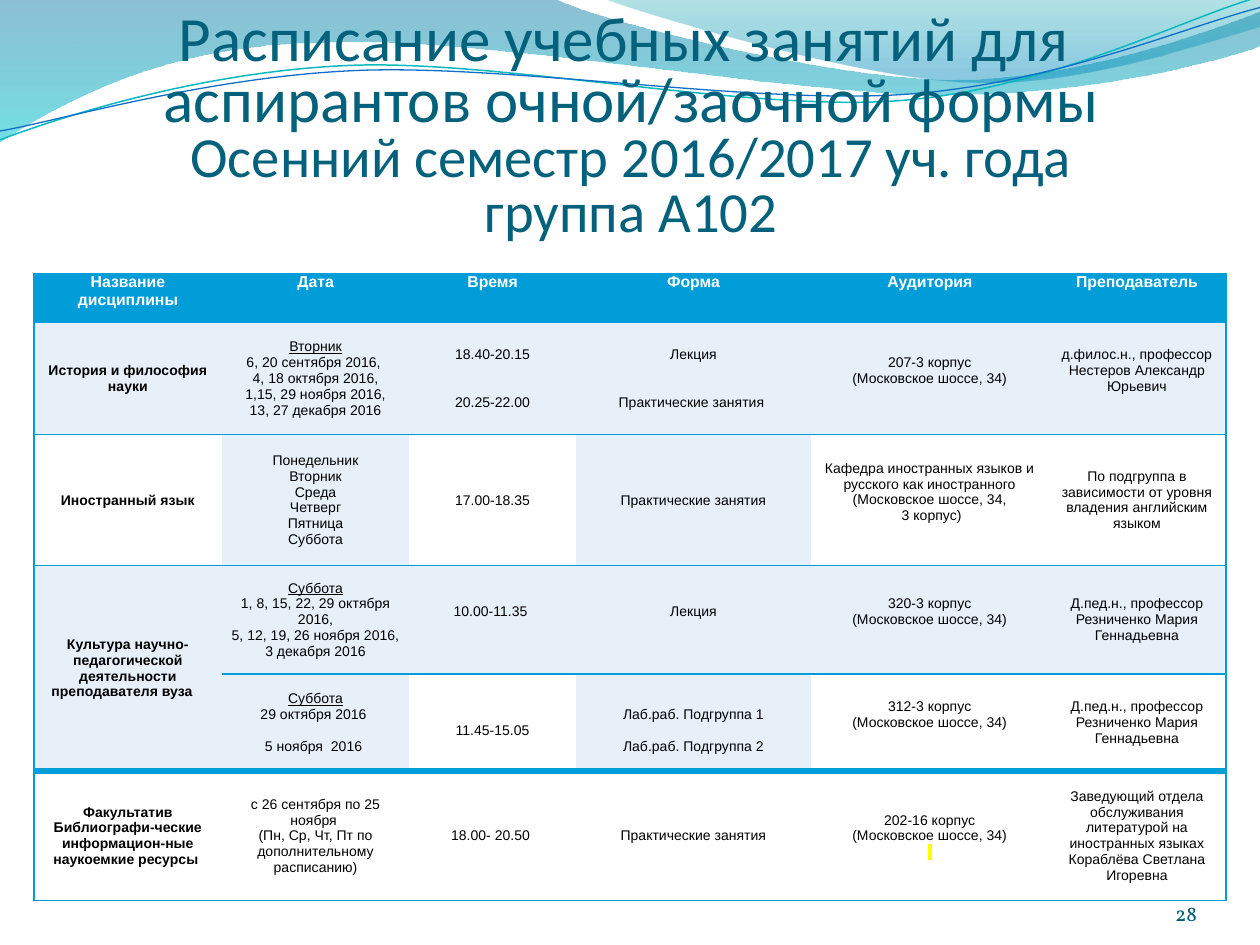
from lxml import etree
from pptx import Presentation
from pptx.dml.color import RGBColor
from pptx.enum.text import MSO_ANCHOR, PP_ALIGN
from pptx.oxml.ns import qn
from pptx.util import Pt

PX = 9144  # 100 px to the inch
TOP, MIDDLE, BOTTOM = MSO_ANCHOR.TOP, MSO_ANCHOR.MIDDLE, MSO_ANCHOR.BOTTOM
CENTER, RIGHT = PP_ALIGN.CENTER, PP_ALIGN.RIGHT
COLORS = {
    "title": "04617B", "number": "045D75", "accent": "009DD9", "tint": "E7EFF8",
    "white": "FFFFFF", "black": "000000", "mark": "FFFF00",
    "teal line": "0AB8BF", "blue line": "0F6FC6",
}
COLORS = {name: RGBColor.from_string(code) for name, code in COLORS.items()}
LINE_HEIGHT = 9.2  # points, one line of 8 pt text


def add_curve(segments):
    """Draw segments of one point (line) or three points (Bezier) as a freeform."""
    points = [(x * PX, y * PX) for segment in segments for x, y in segment]
    builder = page.shapes.build_freeform(*points[0], scale=1.0)
    builder.add_line_segments(points[1:], close=points[0] == points[-1])
    shape = builder.convert_to_shape()
    shape.shadow.inherit = False
    corners = list(shape._element.iter(qn("a:lnTo")))
    for segment in segments[1:]:
        used, corners = corners[:len(segment)], corners[len(segment):]
        if len(segment) == 3:
            curve = etree.Element(qn("a:cubicBezTo"))
            used[0].addprevious(curve)
            for corner in used:
                curve.append(corner[0])
                corner.getparent().remove(corner)
    return shape


def add_span(para, text, font, size, color, bold=False, underline=False):
    span = para.add_run()
    span.text = text
    span.font.name = font
    span.font.size = Pt(size)
    span.font.color.rgb = COLORS[color]
    span.font.bold = bold
    span.font.underline = underline
    return span


deck = Presentation()
deck.slide_width, deck.slide_height = 1000 * PX, 750 * PX
page = deck.slides.add_slide(deck.slide_layouts[6])

# Waves: outline, then (position, colour, opacity) of each gradient stop
waves = [
    ([[(0, -1)], [(440, -1)],
      [(476, 17), (664, 63), (758, 63)], [(853, 63), (958, 26), (1000, 9)],
      [(1001, 36)], [(983, 44), (870, 76), (746, 75)],
      [(622, 75), (382, 28), (257, 34)], [(129, 35), (46, 83), (-1, 113)], [(0, -1)]],
     [(0, "0074A1", 45), (1, "00C6CF", 55)]),
    ([[(479, -1)], [(509, 11), (682, 62), (769, 65)],
      [(856, 69), (961, 32), (1000, 21)], [(1000, 0)], [(479, -1)]],
     [(0, "00A1A9", 30), (0.8, "008BBF", 45)]),
]
for outline, stops in waves:
    wave = add_curve(outline)
    wave.line.fill.background()
    wave.fill.gradient()
    wave.fill.gradient_angle = 270
    for stop, (position, code, _) in zip(wave.fill.gradient_stops, stops):
        stop.position = position
        stop.color.rgb = RGBColor.from_string(code)
    for node, (_, _, opacity) in zip(wave._element.spPr.iter(qn("a:srgbClr")), stops):
        etree.SubElement(node, qn("a:alpha"), val=str(opacity * 1000))

strands = [
    ("teal line", 0.85, [[(0, 111)], [(48, 93), (158, 57), (277, 52)],
                         [(395, 47), (593, 89), (713, 80)],
                         [(833, 71), (938, 15), (998, -2)]]),
    ("blue line", 0.75, [[(0, 104)], [(47, 96), (164, 61), (283, 56)],
                         [(403, 51), (597, 83), (717, 75)],
                         [(836, 67), (941, 21), (1000, 6)]]),
]
for color, width, outline in strands:
    strand = add_curve(outline)
    strand.fill.background()
    strand.line.color.rgb = COLORS[color]
    strand.line.width = Pt(width)

# Title and page number: frame, bottom inset, alignment, line spacing, font, lines
texts = [
    ((51, 21, 900, 226), 54, CENTER, 0.8, "Calibri", "title",
     [("Расписание учебных занятий для  аспирантов очной/заочной формы", 36),
      ("Осенний семестр 2016/2017 уч. года", 32.4), ("группа А102", 32.4)]),
    ((867, 695, 83, 40), 0, RIGHT, 1.0, "Vollkorn", "number", [("28", 12)]),
]
for frame, inset, align, spacing, font, color, lines in texts:
    box = page.shapes.add_textbox(*(v * PX for v in frame)).text_frame
    box.word_wrap = True
    box.vertical_anchor = BOTTOM
    box.margin_left = box.margin_right = box.margin_top = 0
    box.margin_bottom = inset * PX
    para = box.paragraphs[0]
    para.alignment = align
    para.line_spacing = spacing
    for index, (text, size) in enumerate(lines):
        if index:
            para.add_line_break()
        add_span(para, text, font, size, color)

# Timetable: each cell lists its lines, "" is a gap, "_" underlines, "*" is a marked space
ADDRESS = "(Московское шоссе, 34)"
PRACTICE = "Практические занятия"
TEACHER = ["Д.пед.н., профессор", "Резниченко Мария Геннадьевна"]
rows = [
    [["Название дисциплины"], ["Дата"], ["Время"], ["Форма"], ["Аудитория"],
     ["Преподаватель"]],
    [["История и философия науки"],
     ["_Вторник", "6, 20 сентября 2016, ", "4, 18 октября 2016,",
      "1,15, 29 ноября 2016,", "13, 27 декабря 2016"],
     ["18.40-20.15", "", "", "20.25-22.00"], ["Лекция", "", "", PRACTICE + " "],
     ["207-3 корпус", ADDRESS, ""],
     ["д.филос.н., профессор Нестеров Александр Юрьевич", ""]],
    [["Иностранный язык"],
     ["Понедельник", "Вторник", "Среда", "Четверг", "Пятница", "Суббота"],
     ["17.00-18.35"], [PRACTICE],
     ["Кафедра иностранных языков и русского как иностранного",
      "(Московское шоссе, 34,", " 3 корпус)", ""],
     ["По подгруппа в зависимости от уровня владения английским языком"]],
    [["Культура научно-педагогической деятельности преподавателя вуза   "],
     ["_Суббота", "1, 8, 15, 22, 29 октября 2016,", "5, 12, 19, 26 ноября 2016,",
      "3 декабря 2016"],
     ["", "10.00-11.35 ", "", ""], ["", "Лекция", "", ""],
     ["320-3 корпус", ADDRESS, ""], TEACHER],
    [[], ["_Суббота", "29 октября 2016 ", "", "5 ноября  2016 "],
     ["", "11.45-15.05"], ["", "Лаб.раб. Подгруппа 1", "", "Лаб.раб. Подгруппа 2"],
     ["312-3 корпус", ADDRESS, ""], TEACHER],
    [["Факультатив Библиографи-ческие информацион-ные наукоемкие ресурсы "],
     ["с 26 сентября по 25 ноября ", "(Пн, Ср, Чт, Пт по дополнительному расписанию)"],
     ["18.00- 20.50 "], [PRACTICE], ["202-16 корпус", ADDRESS, "*"],
     ["Заведующий отдела обслуживания литературой на иностранных языках",
      "Кораблёва Светлана Игоревна"]],
]
column_widths = [149, 149, 132, 187, 188, 141]
row_heights = [39, 89, 104, 86, 77, 103]
table = page.shapes.add_table(len(rows), len(column_widths), 27 * PX, 217 * PX,
                              sum(column_widths) * PX, sum(row_heights) * PX).table
table.first_row = table.horz_banding = False
for column, width in zip(table.columns, column_widths):
    column.width = width * PX
for row, height in zip(table.rows, row_heights):
    row.height = height * PX
table.cell(3, 0).merge(table.cell(4, 0))

last_row, last_column = len(rows) - 1, len(column_widths) - 1
for r, row in enumerate(rows):
    for c, lines in enumerate(row):
        cell = table.cell(r, c)
        borders = {"L": c == 0, "R": c == last_column,
                   "T": 4 if r == last_row else 1, "B": 4 if r == last_row - 1 else 1}
        if c == 0 and r in (3, 4):
            borders["B" if r == 3 else "T"] = 0
        properties = cell._tc.get_or_add_tcPr()
        for side, width in borders.items():
            edge = etree.SubElement(properties, qn(f"a:ln{side}"), w=str(int(width) * 12700))
            if width:
                solid = etree.SubElement(edge, qn("a:solidFill"))
                etree.SubElement(solid, qn("a:srgbClr"), val=str(COLORS["accent"]))
            else:
                etree.SubElement(edge, qn("a:noFill"))

        tinted = r in (1, 3) or (r in (2, 4) and c in (1, 3))
        cell.fill.solid()
        cell.fill.fore_color.rgb = COLORS["accent" if r == 0 else "tint" if tinted else "white"]
        cell.vertical_anchor = MIDDLE if r else TOP
        cell.margin_left = cell.margin_right = 6 * PX
        filled = [i for i, line in enumerate(lines) if line]
        cell.margin_top = Pt(LINE_HEIGHT * filled[0]) if filled else 0
        cell.margin_bottom = Pt(LINE_HEIGHT * (len(lines) - 1 - filled[-1])) if filled else 0
        for order, i in enumerate(filled):
            frame = cell.text_frame
            para = frame.add_paragraph() if order else frame.paragraphs[0]
            para.alignment = CENTER
            if order:
                para.space_before = Pt(LINE_HEIGHT * (i - filled[order - 1] - 1))
            marked = lines[i] == "*"
            text = "\N{NO-BREAK SPACE}" if marked else lines[i].lstrip("_")
            span = add_span(para, text, "Arial", 8 if r else 9, "black" if r else "white",
                            bold=r == 0 or c == 0, underline=lines[i].startswith("_"))
            if marked:
                highlight = etree.Element(qn("a:highlight"))
                etree.SubElement(highlight, qn("a:srgbClr"), val=str(COLORS["mark"]))
                span.font._element.find(qn("a:solidFill")).addnext(highlight)

deck.save("out.pptx")
